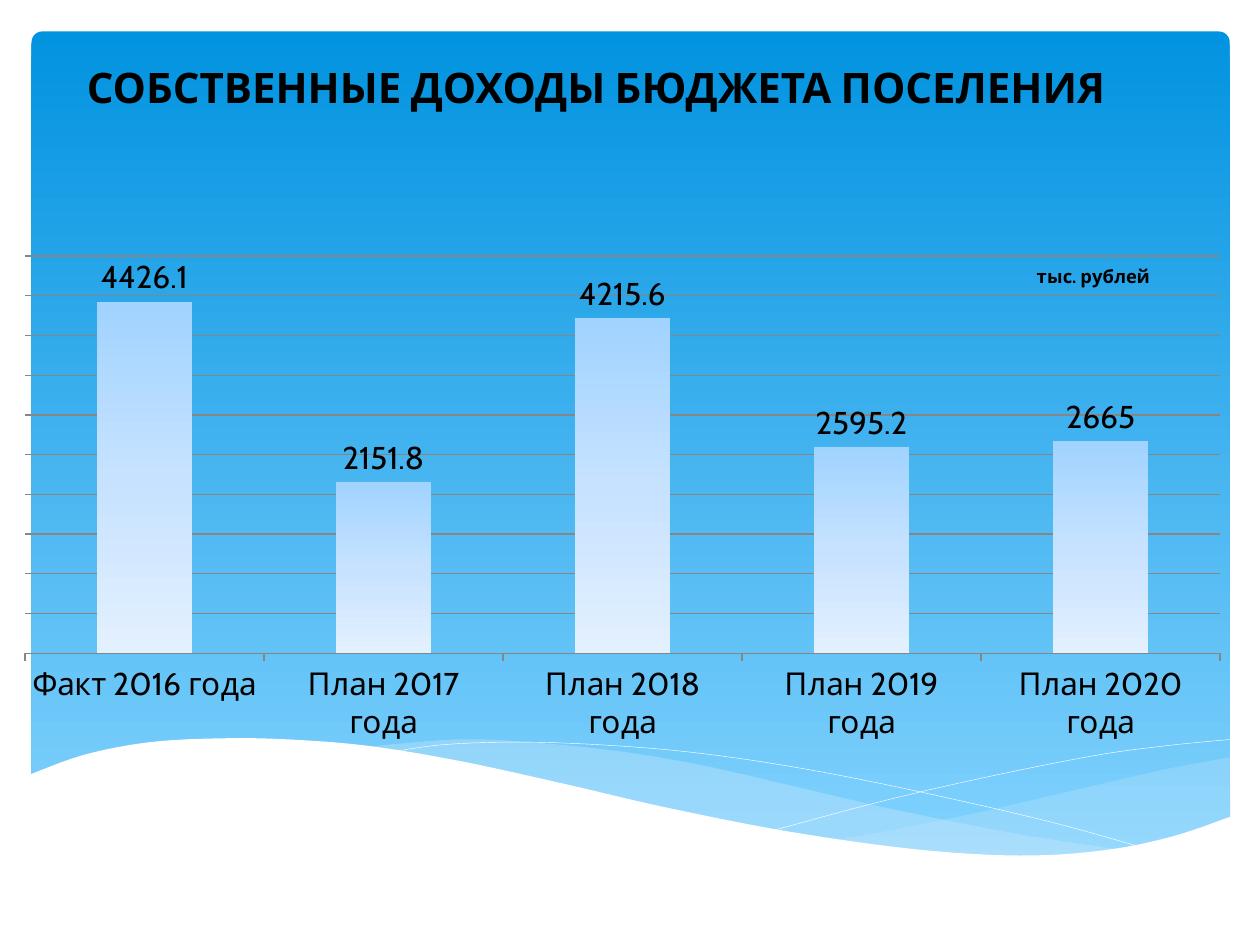
from dataclasses import dataclass
from typing import NamedTuple

from lxml import etree
from pptx import Presentation
from pptx.chart import data as chart_data
from pptx.dml import color as c
from pptx.enum import chart as ch, shapes as s, text as t
from pptx.oxml import ns
from pptx.util import Pt

Point = tuple[float, float]
Curve = list[Point]


@dataclass(frozen=True)
class Theme:
    font: str = "Cabin"
    ink: str = "000000"
    white: str = "FFFFFF"
    haze: str = "C6E7FC"
    grid: str = "868686"
    panel: tuple = ((0, "0293E0"), (100, "83D3FE"))
    bars: tuple = ((0, "A1D3FF"), (50, "C6E2FF"), (100, "E3F0FF"))
    title_size: float = 24
    chart_size: float = 18
    unit_size: float = 10.5


class Wave(NamedTuple):
    curves: list[Curve]
    fill: str | None = None
    opacity: int = 100
    line: str | None = None


THEME = Theme()

WAVES = [
    Wave([[(703, 432.7), (664, 440), (620.6, 450), (561.6, 463.7), (509, 474.5), (476.6, 480.2)],
          [(476.6, 480.2), (527.8, 486.7), (586.8, 489.6), (622, 487.4), (663.8, 480.2),
           (703.4, 467.3)]], THEME.haze, 29),
    Wave([[(643.7, 486), (581.8, 476.6), (509, 462.2), (453.6, 449.3), (399.6, 437),
           (352.1, 429.1), (302.4, 424.1), (260.6, 422.6), (206.6, 427)],
          [(206.6, 427), (261.4, 434.9), (324, 449.3), (381.6, 462.2), (433.4, 473),
           (490.3, 482.4), (539.3, 488.2), (589.7, 489.6), (643.7, 486)]], THEME.haze, 40),
    Wave([[(223.2, 429.8), (254.2, 425.5), (300.2, 424.1), (352.1, 426.2), (401, 430.6),
           (458.6, 439.2), (524.2, 452.2), (599, 469.4), (653.8, 484.6)]], line=THEME.white),
    Wave([[(442.1, 474.5), (501.1, 458.6), (559.4, 445), (624.2, 432), (666, 426.2),
           (702.7, 422.6)]], line=THEME.white),
    Wave([[(703.4, 466.6), (669.6, 478.1), (630, 486), (582.5, 488.9), (522.7, 485.3),
           (450.7, 475.2), (380.9, 461.5), (321.8, 447.8), (262.8, 434.9), (210.2, 426.2),
           (165.6, 422.6), (127.4, 421.9), (85.7, 424.1), (48.2, 431.3), (16.6, 442.8)],
          [(16.6, 526.3), (703.4, 526.3)]], THEME.white),
]

INCOME = {
    "Факт 2016 года": 4426.1,
    "План 2017 года": 2151.8,
    "План 2018 года": 4215.6,
    "План 2019 года": 2595.2,
    "План 2020 года": 2665,
}


def rgb(value: str) -> c.RGBColor:
    return c.RGBColor.from_string(value)


def set_font(font, size: float, bold: bool = False) -> None:
    font.name, font.size, font.bold = THEME.font, Pt(size), bold
    font.color.rgb = rgb(THEME.ink)


def write(frame, content: str, *, size: float, bold: bool = False,
          align=t.PP_ALIGN.CENTER) -> None:
    para = frame.paragraphs[0]
    para.alignment = align
    span = para.add_run()
    span.text = content
    set_font(span.font, size, bold)


def fill_gradient(fill, element, stops: tuple) -> None:
    """Fill from top to bottom; element is the XML that holds the fill."""
    fill.gradient()
    fill.gradient_angle = 270
    listing = element.find(".//" + ns.qn("a:gsLst"))
    for old in list(listing):
        listing.remove(old)
    for position, value in stops:
        stop = etree.SubElement(listing, ns.qn("a:gs"), pos=str(position * 1000))
        etree.SubElement(stop, ns.qn("a:srgbClr"), val=value)


def smooth(points: Curve, steps: int = 6) -> Curve:
    """Run a Catmull-Rom curve through the points."""
    if len(points) < 3:
        return points
    padded = [points[0], *points, points[-1]]
    result = [points[0]]
    for a, b, d, e in zip(padded, padded[1:], padded[2:], padded[3:]):
        for step in range(1, steps + 1):
            k = step / steps
            result.append(tuple(
                0.5 * (2 * q + (r - p) * k + (2 * p - 5 * q + 4 * r - v) * k ** 2
                       + (3 * q - p - 3 * r + v) * k ** 3)
                for p, q, r, v in zip(a, b, d, e)))
    return result


def draw_wave(page, wave: Wave) -> None:
    points = [(x * 100, y * 100) for curve in wave.curves for x, y in smooth(curve)]
    builder = page.shapes.build_freeform(*points[0], scale=Pt(1) / 100)
    builder.add_line_segments(points[1:], close=wave.fill is not None)
    shape = builder.convert_to_shape()
    shape.shadow.inherit = False
    if wave.fill:
        shape.fill.solid()
        shape.fill.fore_color.rgb = rgb(wave.fill)
        tint = shape.element.find(".//" + ns.qn("a:srgbClr"))
        etree.SubElement(tint, ns.qn("a:alpha"), val=str(wave.opacity * 1000))
    else:
        shape.fill.background()
    if wave.line:
        shape.line.color.rgb = rgb(wave.line)
        shape.line.width = Pt(0.25)
    else:
        shape.line.fill.background()


def draw_panel(page) -> None:
    panel = page.shapes.add_shape(
        s.MSO_SHAPE.ROUNDED_RECTANGLE, Pt(18), Pt(18), Pt(684.7), Pt(475.2))
    panel.adjustments[0] = 0.013
    panel.shadow.inherit = False
    panel.line.fill.background()
    fill_gradient(panel.fill, panel.element, THEME.panel)


def place(parent, index: int, **values) -> None:
    """Give a chart part a manual layout, as fractions of the chart."""
    for old in parent.findall(ns.qn("c:layout")):
        parent.remove(old)
    layout = etree.Element(ns.qn("c:layout"))
    manual = etree.SubElement(layout, ns.qn("c:manualLayout"))
    for name, value in values.items():
        etree.SubElement(manual, ns.qn("c:" + name), val=str(value))
    parent.insert(index, layout)


def draw_chart(page) -> None:
    data = chart_data.CategoryChartData()
    data.categories = list(INCOME)
    data.add_series("Series 1", list(INCOME.values()))
    chart = page.shapes.add_chart(
        ch.XL_CHART_TYPE.COLUMN_CLUSTERED, Pt(0), Pt(110.2), Pt(711.4), Pt(319.7), data).chart
    set_font(chart.font, THEME.chart_size)
    chart.has_legend = False
    write(chart.chart_title.text_frame, "тыс. рублей", size=THEME.unit_size, bold=True)
    chart.chart_title.include_in_layout = True
    place(chart.element.find(".//" + ns.qn("c:title")), 1,
          xMode="edge", yMode="edge", x=0.83, y=0.12)
    place(chart.element.find(".//" + ns.qn("c:plotArea")), 0, layoutTarget="inner",
          xMode="edge", yMode="edge", x=0.02, y=0.113, w=0.96, h=0.71)

    values = chart.value_axis
    values.minimum_scale, values.maximum_scale, values.major_unit = 0, 5000, 500
    values.visible = False
    values.has_major_gridlines = True
    chart.category_axis.major_tick_mark = ch.XL_TICK_MARK.OUTSIDE
    for line in (values.major_gridlines.format.line, chart.category_axis.format.line):
        line.color.rgb = rgb(THEME.grid)
        line.width = Pt(0.75)

    plot = chart.plots[0]
    plot.gap_width = 150
    plot.vary_by_categories = False
    plot.has_data_labels = True
    labels = plot.data_labels
    labels.show_value = True
    labels.position = ch.XL_LABEL_POSITION.OUTSIDE_END
    set_font(labels.font, THEME.chart_size)
    fill_gradient(plot.series[0].format.fill,
                  chart.element.find(".//" + ns.qn("c:ser")), THEME.bars)


def draw_title(page) -> None:
    title = page.shapes.title
    title.left, title.top, title.width, title.height = Pt(20.2), Pt(31.7), Pt(640.8), Pt(36)
    title.element.getparent().append(title.element)
    frame = title.text_frame
    frame.vertical_anchor = t.MSO_ANCHOR.TOP
    frame.auto_size = t.MSO_AUTO_SIZE.SHAPE_TO_FIT_TEXT
    write(frame, "СОБСТВЕННЫЕ ДОХОДЫ БЮДЖЕТА ПОСЕЛЕНИЯ", size=THEME.title_size, bold=True)


def main() -> None:
    deck = Presentation()
    deck.slide_width, deck.slide_height = Pt(720), Pt(540)
    page = deck.slides.add_slide(deck.slide_layouts.get_by_name("Title Only"))
    draw_panel(page)
    for wave in WAVES:
        draw_wave(page, wave)
    draw_title(page)
    draw_chart(page)
    deck.save("out.pptx")


if __name__ == "__main__":
    main()
